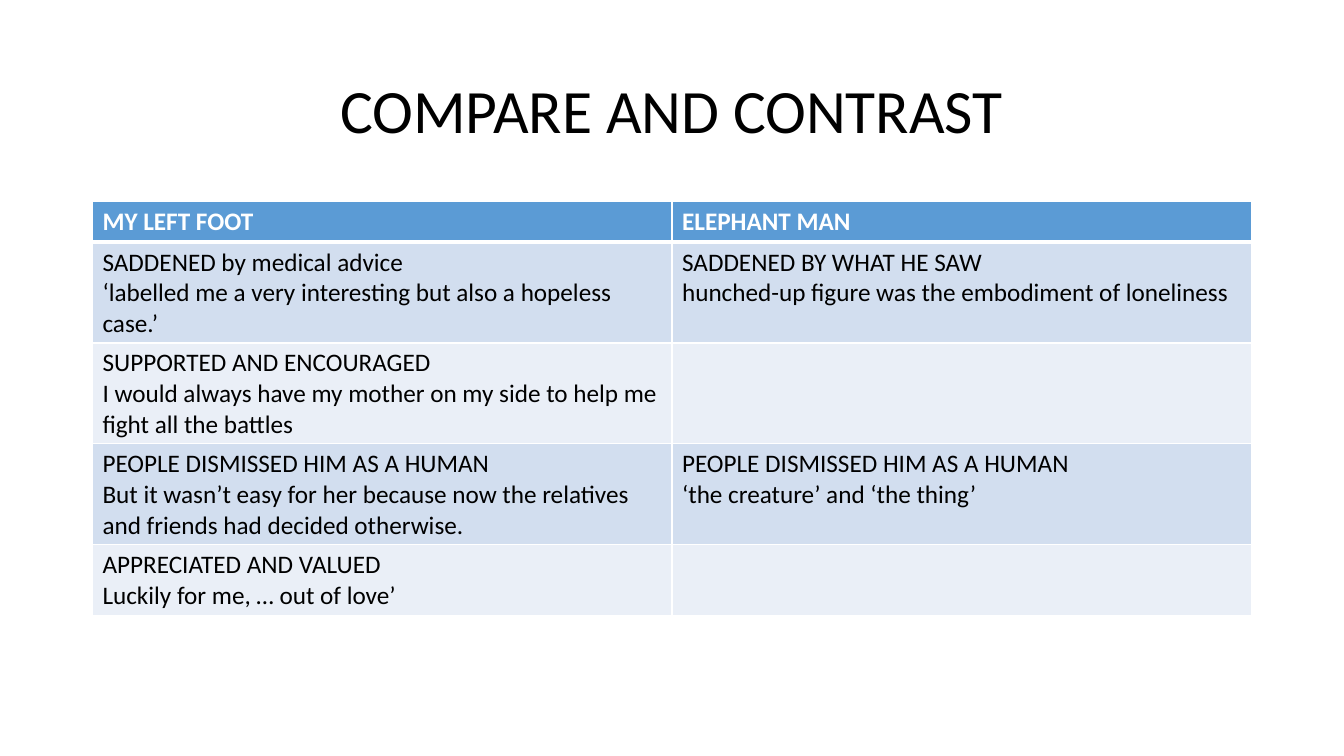
"""Build a slide that compares two films in a table."""
from lxml.etree import SubElement
from pptx import Presentation
from pptx.dml.color import RGBColor as RGB
from pptx.enum.text import MSO_ANCHOR as Anchor, PP_ALIGN as Align
from pptx.oxml.ns import qn
from pptx.util import Cm, Pt

HUES = {"head": "5B9BD5", "odd": "D2DEEF", "even": "EAEFF7",
        "light": "FFFFFF", "dark": "000000"}
ROWS = [
    ("MY LEFT FOOT", "ELEPHANT MAN"),
    ("SADDENED by medical advice\n"
     "‘labelled me a very interesting but also a hopeless case.’",
     "SADDENED BY WHAT HE SAW\n"
     "hunched-up figure was the embodiment of loneliness"),
    ("SUPPORTED AND ENCOURAGED\n"
     "I would always have my mother on my side to help me fight all the battles",
     ""),
    ("PEOPLE DISMISSED HIM AS A HUMAN\n"
     "But it wasn’t easy for her because now the relatives and friends"
     " had decided otherwise.",
     "PEOPLE DISMISSED HIM AS A HUMAN\n‘the creature’ and ‘the thing’"),
    ("APPRECIATED AND VALUED\nLuckily for me, … out of love’", ""),
]
LEFT, WIDTH = Cm(2.33), Cm(29.21)


def style(para, size, hue, bold=False):
    font = para.font
    font.name, font.size, font.bold = "Calibri", Pt(size), bold
    font.color.rgb = RGB.from_string(HUES[hue])
    for run in para.runs:
        run.font.name, run.font.size, run.font.bold = "Calibri", Pt(size), bold
        run.font.color.rgb = RGB.from_string(HUES[hue])


def edge(cell, side, width):
    line = SubElement(cell._tc.get_or_add_tcPr(), qn(f"a:ln{side}"), w=str(Pt(width)))
    fill = SubElement(line, qn("a:solidFill"))
    SubElement(fill, qn("a:srgbClr"), val=HUES["light"])


deck = Presentation()
deck.slide_width, deck.slide_height = Cm(33.87), Cm(19.05)
slide = deck.slides.add_slide(deck.slide_layouts[6])

title = slide.shapes.add_textbox(LEFT, Cm(1.01), WIDTH, Cm(3.68)).text_frame
title.word_wrap = True
title.vertical_anchor = Anchor.MIDDLE
title.text = "COMPARE AND CONTRAST"
para = title.paragraphs[0]
para.alignment = Align.CENTER
para.line_spacing = 0.9
style(para, 44, "dark")

frame = slide.shapes.add_table(len(ROWS), 2, LEFT, Cm(5.07), WIDTH, Cm(10.44))
table = frame.table
for r, texts in enumerate(ROWS):
    table.rows[r].height = Cm(1.03)
    head = r == 0
    band = "head" if head else "odd" if r % 2 else "even"
    for c, text in enumerate(texts):
        cell = table.cell(r, c)
        cell.text_frame.text = text
        for para in cell.text_frame.paragraphs:
            style(para, 18, "light" if head else "dark", head)
        for side in "LRTB":
            thick = (head and side == "B") or (r == 1 and side == "T")
            edge(cell, side, 3 if thick else 1)
        cell.fill.solid()
        cell.fill.fore_color.rgb = RGB.from_string(HUES[band])
frame.height = Cm(10.44)

deck.save("out.pptx")
